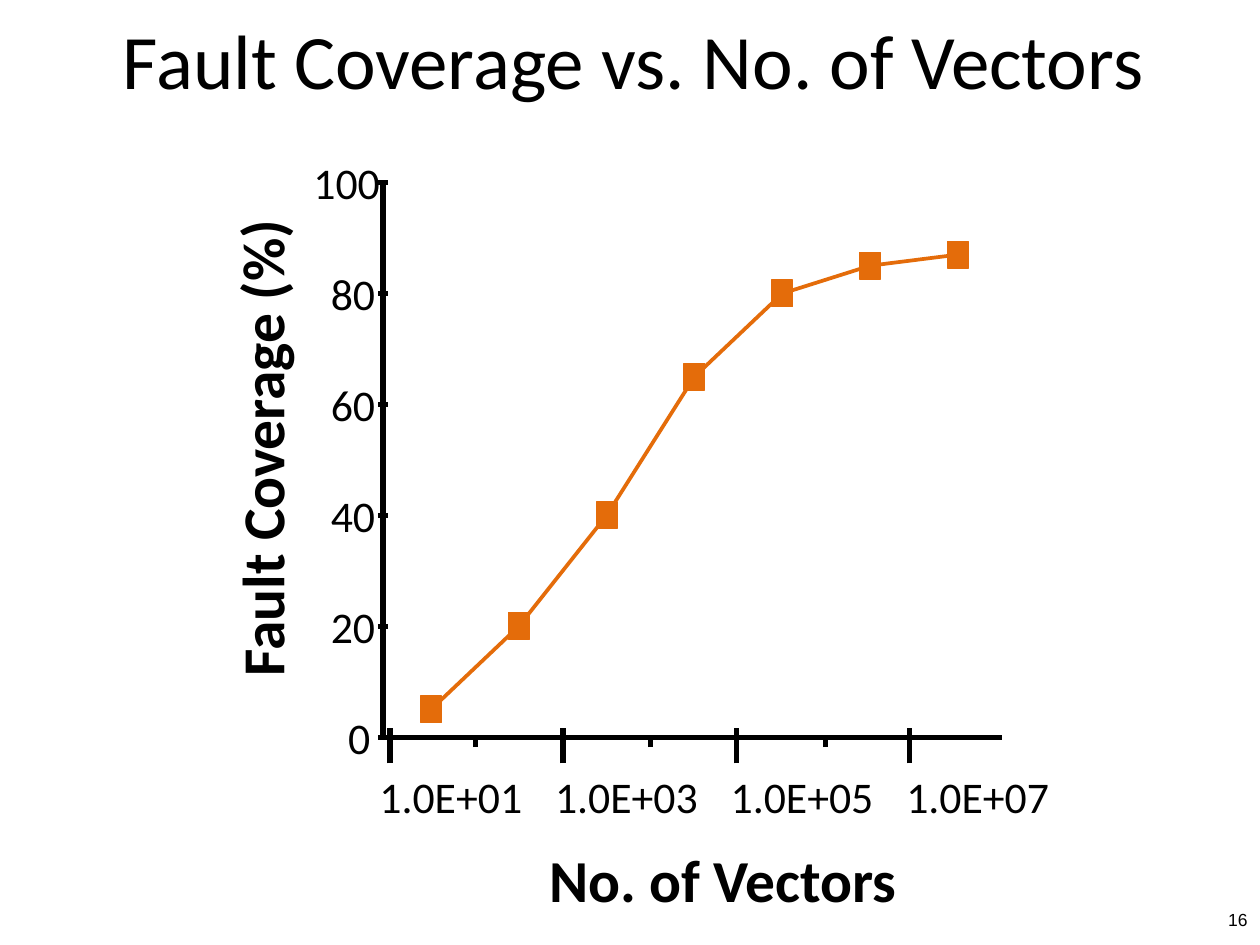
from dataclasses import dataclass
from itertools import pairwise

from lxml import etree
from pptx import Presentation
from pptx.dml.color import RGBColor
from pptx.enum.shapes import MSO_CONNECTOR, MSO_SHAPE
from pptx.enum.text import MSO_ANCHOR, PP_ALIGN
from pptx.oxml.ns import qn
from pptx.util import Cm, Pt

STRAIGHT = MSO_CONNECTOR.STRAIGHT
RECTANGLE = MSO_SHAPE.RECTANGLE
TOP, MIDDLE = MSO_ANCHOR.TOP, MSO_ANCHOR.MIDDLE
LEFT, CENTER, RIGHT = PP_ALIGN.LEFT, PP_ALIGN.CENTER, PP_ALIGN.RIGHT


@dataclass(frozen=True)
class Theme:
    ink: RGBColor = RGBColor(0x00, 0x00, 0x00)
    accent: RGBColor = RGBColor(0xE4, 0x6C, 0x0A)
    body_font: str = "Calibri"
    number_font: str = "Arial"
    title_size: float = 44
    axis_title_size: float = 34
    label_size: float = 25
    number_size: float = 10
    axis_width: float = 3
    curve_width: float = 2.13
    marker_width: float = 0.75


class SlideBuilder:
    """Holds the theme and the current slide; all lengths are in centimetres."""

    def __init__(self, slide, theme):
        self.shapes = slide.shapes
        self.theme = theme

    def text(self, words, left, top, width, height, size, font=None, bold=False,
             align=LEFT, anchor=TOP, inset=0, wrap=False, rotation=0):
        box = self.shapes.add_textbox(Cm(left), Cm(top), Cm(width), Cm(height))
        box.rotation = rotation
        frame_format = {"word_wrap": wrap, "vertical_anchor": anchor}
        for side in ("left", "right", "top", "bottom"):
            frame_format[f"margin_{side}"] = Cm(inset)
        for name, value in frame_format.items():
            setattr(box.text_frame, name, value)
        para = box.text_frame.paragraphs[0]
        para.alignment = align
        span = para.add_run()
        span.text = words
        span_format = {"name": font or self.theme.body_font, "size": Pt(size), "bold": bold}
        for name, value in span_format.items():
            setattr(span.font, name, value)
        span.font.color.rgb = self.theme.ink

    def line(self, start, end, color, width):
        line = self.shapes.add_connector(STRAIGHT, *map(Cm, (*start, *end)))
        line.line.color.rgb = color
        line.line.width = Pt(width)
        etree.SubElement(line._element.spPr, qn("a:effectLst"))

    def axis_line(self, start, end):
        self.line(start, end, self.theme.ink, self.theme.axis_width)

    def marker(self, x, y, width=0.42, height=0.54):
        marker = self.shapes.add_shape(RECTANGLE, Cm(x - width / 2), Cm(y - height / 2),
                                       Cm(width), Cm(height))
        marker.shadow.inherit = False
        marker.fill.solid()
        marker.fill.fore_color.rgb = self.theme.accent
        marker.line.color.rgb = self.theme.accent
        marker.line.width = Pt(self.theme.marker_width)


# Plot geometry
AXIS_X, BASELINE, PLOT_HEIGHT = 7.72, 14.86, 11.18
X_AXIS_START, X_AXIS_END = 7.82, 20.19
FIRST_POINT, POINT_STEP = 8.69, 1.77
COVERAGE = (5, 20, 40, 65, 80, 85, 87)
VECTOR_LABELS = ("1.0E+01", "1.0E+03", "1.0E+05", "1.0E+07")


def height_of(percent):
    return BASELINE - PLOT_HEIGHT * percent / 100


def draw_axes(page):
    size = page.theme.label_size

    # Vertical axis with ticks and labels
    page.axis_line((AXIS_X, height_of(100)), (AXIS_X, BASELINE + 0.05))
    for percent in range(0, 101, 20):
        y, label = height_of(percent), str(percent)
        page.axis_line((AXIS_X - 0.1, y), (AXIS_X + 0.1, y))
        page.text(label, 7.37 - 0.35 * len(label), y - 0.53, 0.45 * len(label), 1.07, size)

    # Horizontal axis with long ticks, labels and short ticks between them
    page.axis_line((X_AXIS_START, BASELINE), (X_AXIS_END, BASELINE))
    for index, label in enumerate(VECTOR_LABELS):
        x = 7.86 + 3.49 * index
        page.axis_line((x, 15.39), (x, 14.68))
        page.text(label, 7.65 + 3.54 * index, 15.52, 2.9, 1.07, size)
    for index in range(len(VECTOR_LABELS) - 1):
        x = 9.58 + 3.53 * index
        page.axis_line((x, BASELINE + 0.2), (x, BASELINE))


def draw_curve(page):
    points = [(FIRST_POINT + POINT_STEP * index, height_of(percent))
              for index, percent in enumerate(COVERAGE)]
    for start, end in pairwise(points):
        page.line(start, end, page.theme.accent, page.theme.curve_width)
    for point in points:
        page.marker(*point)


def main():
    deck = Presentation()
    deck.slide_width, deck.slide_height = Cm(25.4), Cm(19.05)
    theme = Theme()
    page = SlideBuilder(deck.slides.add_slide(deck.slide_layouts[6]), theme)

    # Title and slide number
    page.text("Fault Coverage vs. No. of Vectors", 0, 0, 25.55, 2.36, theme.title_size,
              align=CENTER, anchor=MIDDLE, inset=0.2, wrap=True)
    page.text("16", 24.33, 18.03, 1.07, 1.02, theme.number_size, font=theme.number_font,
              align=RIGHT, anchor=MIDDLE, inset=0.25, wrap=True)

    # Plot
    draw_axes(page)
    draw_curve(page)

    # Axis titles
    page.text("No. of Vectors", 11.07, 16.99, 7.09, 1.45, theme.axis_title_size, bold=True)
    page.text("Fault Coverage (%)", 0.61, 8.26, 9.3, 1.45, theme.axis_title_size,
              bold=True, rotation=270)

    deck.save("out.pptx")


if __name__ == "__main__":
    main()
